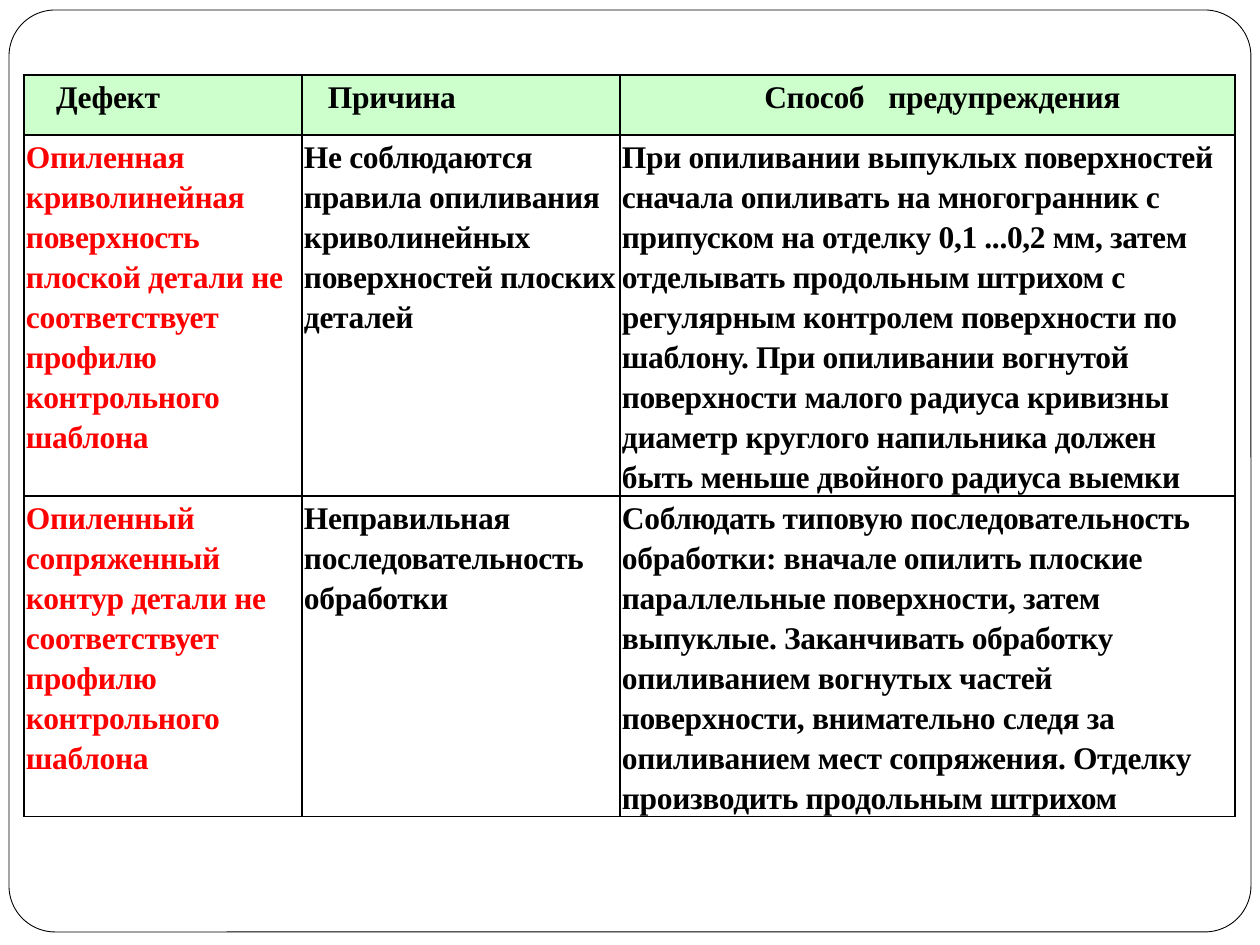
from dataclasses import dataclass

from lxml import etree
from pptx import Presentation
from pptx import util as u
from pptx.dml.color import RGBColor
from pptx.enum import shapes, text
from pptx.oxml import ns

PX = 914400 // 126  # EMU in one px


@dataclass(frozen=True)
class Theme:
    font: str = "Times New Roman"
    size: int = 18
    tracking: int = -20  # hundredths of a point
    wide_gap: int = 900
    leading: float = 1.15
    ink: str = "000000"
    defect: str = "FF0000"
    paper: str = "FFFFFF"
    header: str = "CCFFCC"
    frame_line: float = 0.5
    grid_line: float = 1


class Deck:
    def __init__(self, prs, theme):
        self.prs, self.theme = prs, theme
        self.s = None

    def add_slide(self):
        self.s = self.prs.slides.add_slide(self.prs.slide_layouts[6])

    def frame(self, x, y, w, h, radius):
        sp = self.s.shapes.add_shape(
            shapes.MSO_SHAPE.ROUNDED_RECTANGLE, *(v * PX for v in (x, y, w, h)))
        sp.adjustments[0] = radius
        sp.shadow.inherit = False
        sp.fill.solid()
        sp.fill.fore_color.rgb = RGBColor.from_string(self.theme.paper)
        sp.line.color.rgb = RGBColor.from_string(self.theme.ink)
        sp.line.width = u.Pt(self.theme.frame_line)

    def table(self, x, y, widths, heights):
        table = self.s.shapes.add_table(
            len(heights), len(widths), x * PX, y * PX,
            sum(widths) * PX, sum(heights) * PX).table
        table.first_row = table.horz_banding = False
        for col, width in zip(table.columns, widths):
            col.width = width * PX
        for row, height in zip(table.rows, heights):
            row.height = height * PX
        return table

    def borders(self, cell):
        tc_pr = cell._tc.get_or_add_tcPr()
        for side in ("lnL", "lnR", "lnT", "lnB"):
            ln = etree.SubElement(tc_pr, ns.qn(f"a:{side}"),
                                  w=str(u.Pt(self.theme.grid_line)))
            fill = etree.SubElement(ln, ns.qn("a:solidFill"))
            etree.SubElement(fill, ns.qn("a:srgbClr"), val=self.theme.ink)

    def cell(self, cell, runs, color, fill, indent=0, align=text.PP_ALIGN.LEFT):
        """Fill a cell with runs, given as (text, tracking) pairs."""
        self.borders(cell)
        cell.fill.solid()
        cell.fill.fore_color.rgb = RGBColor.from_string(fill)
        cell.margin_left = cell.margin_right = 2 * PX
        cell.margin_top = cell.margin_bottom = 0
        p = cell.text_frame.paragraphs[0]
        p.alignment, p.line_spacing = align, self.theme.leading
        p._p.get_or_add_pPr().set("marL", str(indent * PX))
        p.font.name, p.font.size = self.theme.font, u.Pt(self.theme.size)
        p.font.bold = True
        p.font.color.rgb = RGBColor.from_string(color)
        for words, tracking in runs:
            r = p.add_run()
            r.text = words
            r._r.get_or_add_rPr().set("spc", str(tracking))


ROWS = [
    ("Опиленная криволинейная поверхность плоской детали не соответствует "
     "профилю контрольного шаблона",
     "Не соблюдаются правила опиливания криволинейных поверхностей плоских "
     "деталей",
     "При опиливании выпуклых поверхностей сначала опиливать на многогранник "
     "с припуском на отделку 0,1 ...0,2 мм, затем отделывать продольным "
     "штрихом с регулярным контролем поверхности по шаблону. При опиливании "
     "вогнутой поверхности малого радиуса кривизны диаметр круглого "
     "напильника должен быть меньше двойного радиуса выемки"),
    ("Опиленный сопряженный контур детали не соответствует профилю "
     "контрольного шаблона",
     "Неправильная последовательность обработки",
     "Соблюдать типовую последовательность обработки: вначале опилить плоские "
     "параллельные поверхности, затем выпуклые. Заканчивать обработку "
     "опиливанием вогнутых частей поверхности, внимательно следя за "
     "опиливанием мест сопряжения. Отделку производить продольным штрихом"),
]


def main():
    prs = Presentation()
    prs.slide_width, prs.slide_height = u.Inches(10), u.Inches(7.5)
    theme = Theme()
    deck = Deck(prs, theme)
    deck.add_slide()

    # Rounded page frame
    deck.frame(9, 10, 1242, 922, 0.05)

    # Table of defects
    table = deck.table(24, 75, (278, 318, 615), (60, 361, 320))

    # Header row
    normal = theme.tracking
    left, center = text.PP_ALIGN.LEFT, text.PP_ALIGN.CENTER
    headers = [
        ([("Дефект", normal)], 30, left),
        ([("Причина", normal)], 24, left),
        ([("Способ", normal), (" ", theme.wide_gap),
          ("предупреждения", normal)], 30, center),
    ]
    for col, (runs, indent, align) in enumerate(headers):
        deck.cell(table.cell(0, col), runs, theme.ink, theme.header, indent, align)

    # Body rows, with the defect column in red
    colors = (theme.defect, theme.ink, theme.ink)
    for row, texts in enumerate(ROWS, start=1):
        for col, (words, color) in enumerate(zip(texts, colors)):
            deck.cell(table.cell(row, col), [(words, normal)], color, theme.paper)

    prs.save("out.pptx")


if __name__ == "__main__":
    main()
